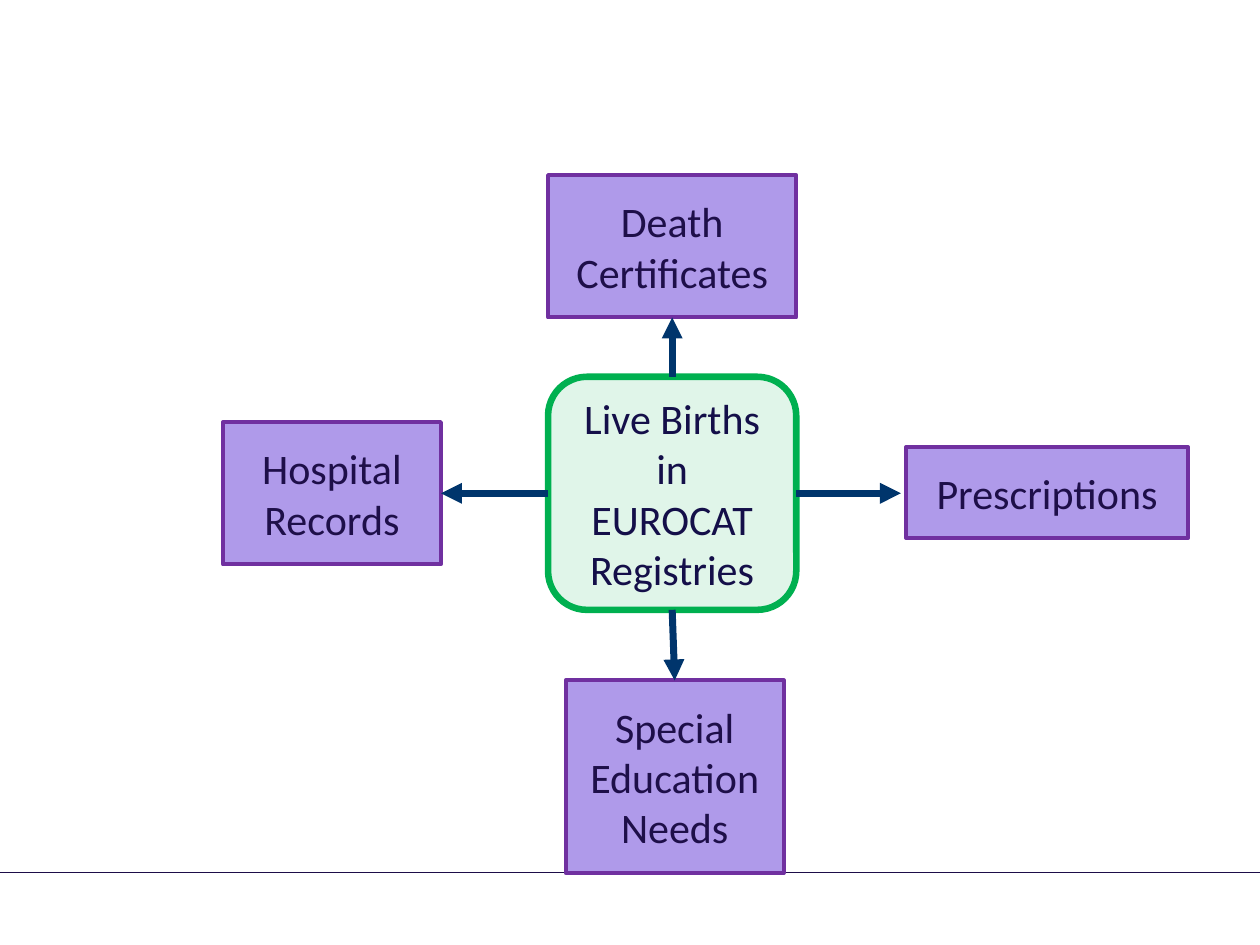
from lxml.etree import SubElement
from pptx import Presentation
from pptx.dml.color import RGBColor
from pptx.enum.shapes import MSO_CONNECTOR, MSO_SHAPE
from pptx.enum.text import MSO_ANCHOR, MSO_AUTO_SIZE, PP_ALIGN
from pptx.oxml.ns import qn
from pptx.util import Inches, Pt

COLORS = {
    "rule": "1D0D49",
    "arrow": "00356C",
    "hub": "00B050",
    "hub_text": "140F49",
    "source_fill": "582DD4",
    "source_line": "7030A0",
    "source_text": "1E0F49",
}
CELL = Inches(0.1)
COLUMNS, ROWS = 100, 75
TOP, LEFT, BOTTOM, RIGHT = range(4)
HUB_AREA = (43.5, 29.9, 19.7, 18.5)
SOURCES = [
    ("Death Certificates", (43.5, 13.9, 19.7, 11.3), TOP),
    ("Special Education Needs", (44.9, 54, 17.3, 15.3), BOTTOM),
    ("Hospital Records", (17.7, 33.5, 17.3, 11.3), LEFT),
    ("Prescriptions", (71.9, 35.5, 22.4, 7.2), RIGHT),
]


def grid(*cells):
    return [round(cell * CELL) for cell in cells]


def color(name):
    return RGBColor.from_string(COLORS[name])


def add_box(slide, kind, text, area, fill, opacity, line, line_width, text_color):
    shape = slide.shapes.add_shape(kind, *grid(*area))
    shape.shadow.inherit = False
    shape.fill.solid()
    shape.fill.fore_color.rgb = color(fill)
    fill_color = shape.fill._xPr.find(qn("a:solidFill"))[0]
    SubElement(fill_color, qn("a:alpha"), val=str(opacity * 1000))
    shape.line.color.rgb = color(line)
    shape.line.width = Pt(line_width)
    frame = shape.text_frame
    frame.word_wrap = True
    frame.vertical_anchor = MSO_ANCHOR.MIDDLE
    paragraph = frame.paragraphs[0]
    paragraph.alignment = PP_ALIGN.CENTER
    run = paragraph.add_run()
    run.text = text
    run.font.name = "Calibri"
    run.font.size = Pt(24)
    run.font.color.rgb = color(text_color)
    return shape


def add_hub(slide):
    return add_box(slide, MSO_SHAPE.ROUNDED_RECTANGLE, "Live Births in EUROCAT Registries",
                   HUB_AREA, "hub", 12, "hub", 3.75, "hub_text")


def add_source(slide, text, area):
    shape = add_box(slide, MSO_SHAPE.RECTANGLE, text, area, "source_fill", 48,
                    "source_line", 2.25, "source_text")
    frame = shape.text_frame
    frame.margin_left = frame.margin_right = Inches(0.16)
    frame.margin_top = frame.margin_bottom = Inches(0.16)
    frame.auto_size = MSO_AUTO_SIZE.SHAPE_TO_FIT_TEXT
    return shape


def add_line(slide, start, end, line_color, width):
    connector = slide.shapes.add_connector(MSO_CONNECTOR.STRAIGHT, *grid(*start, *end))
    connector.line.color.rgb = color(line_color)
    connector.line.width = Pt(width)
    SubElement(connector._element.spPr, qn("a:effectLst"))
    return connector


def add_arrow(slide, hub, source, side):
    left, top, width, height = HUB_AREA
    middle = top + height / 2
    connector = add_line(slide, (left + width, middle), (71.5, middle), "arrow", 4)
    SubElement(connector.line._get_or_add_ln(), qn("a:tailEnd"), type="triangle")
    connector.begin_connect(hub, side)
    if side != RIGHT:
        connector.end_connect(source, (side + 2) % 4)


def main():
    presentation = Presentation()
    presentation.slide_width, presentation.slide_height = grid(COLUMNS, ROWS)
    slide = presentation.slides.add_slide(presentation.slide_layouts[6])
    add_line(slide, (0, 69.2), (COLUMNS, 69.2), "rule", 0.25)
    hub = add_hub(slide)
    for text, area, side in SOURCES:
        source = add_source(slide, text, area)
        add_arrow(slide, hub, source, side)
    presentation.save("out.pptx")


if __name__ == "__main__":
    main()
